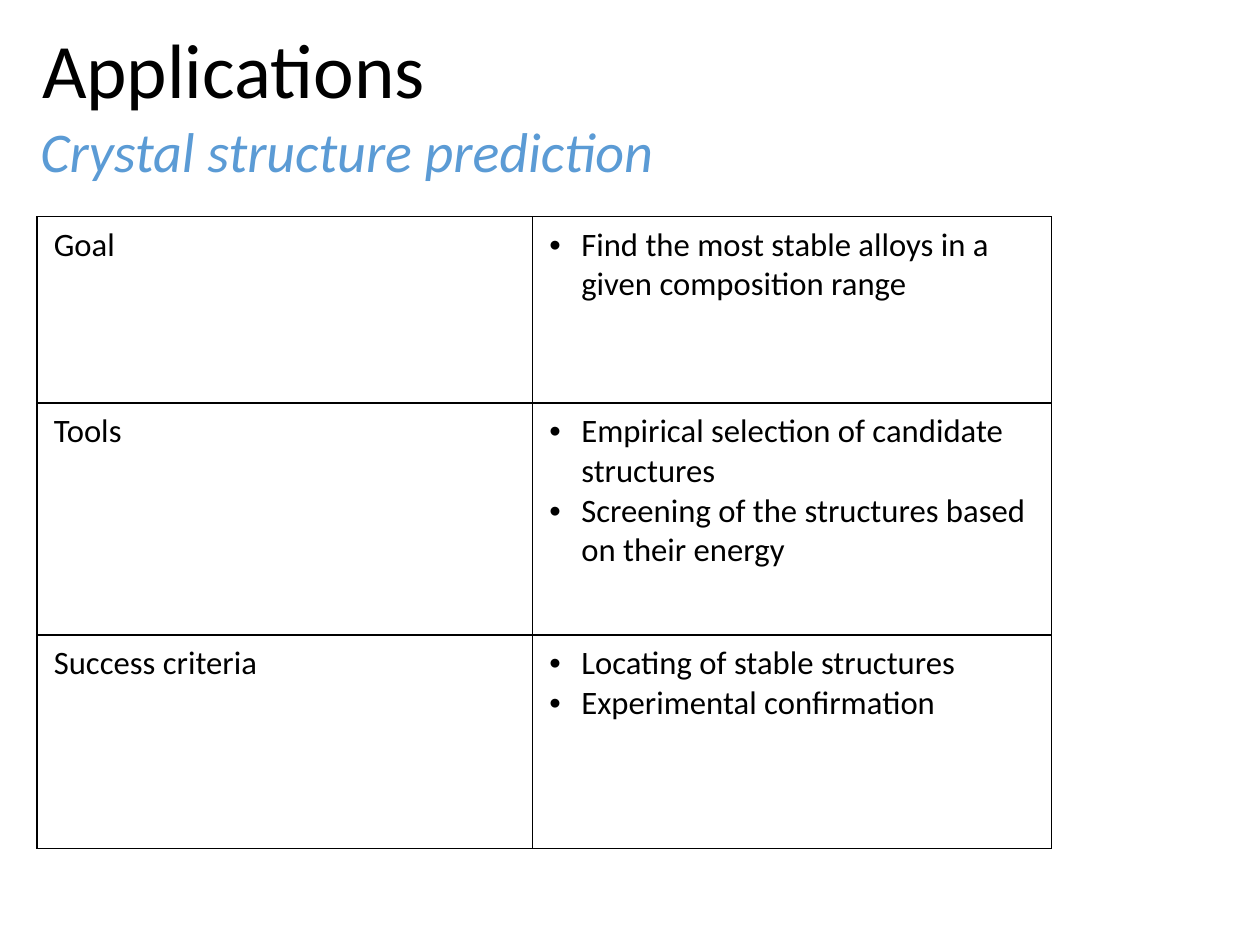
from dataclasses import dataclass

from lxml import etree
from pptx import Presentation
from pptx.dml.color import RGBColor
from pptx.enum import text
from pptx.oxml import ns
from pptx.util import Inches, Pt


@dataclass(frozen=True)
class Theme:
    font: str = "Calibri"
    ink: str = "000000"
    accent: str = "5B9BD5"
    title_size: float = 33
    subtitle_size: float = 24
    body_size: float = 14
    border_width: float = 0.75


@dataclass(frozen=True)
class Topic:
    name: str
    points: tuple[str, ...]
    height: float


THEME = Theme()
SLIDE_WIDTH = 7.5
SLIDE_HEIGHT = SLIDE_WIDTH * 3 / 4
COLUMN_WIDTHS = (2.95, 3.09)
TOPICS = (
    Topic("Goal", ("Find the most stable alloys in a given composition range",), 1.11),
    Topic("Tools", ("Empirical selection of candidate structures",
                    "Screening of the structures based on their energy"), 1.38),
    Topic("Success criteria", ("Locating of stable structures",
                               "Experimental confirmation"), 1.27),
)


def style_paragraph(paragraph, size: float, color: str = THEME.ink) -> None:
    paragraph.font.name = THEME.font
    paragraph.font.size = Pt(size)
    paragraph.font.color.rgb = RGBColor.from_string(color)


def fill_heading(heading, words: str, box: tuple[float, ...], size: float, color: str):
    """Place a one-line heading and return its paragraph."""
    heading.left, heading.top, heading.width, heading.height = map(Inches, box)
    frame = heading.text_frame
    frame.word_wrap = True
    frame.auto_size = text.MSO_AUTO_SIZE.NONE
    frame.vertical_anchor = text.MSO_ANCHOR.TOP
    frame.margin_left = frame.margin_right = Inches(0.07)
    frame.margin_top = frame.margin_bottom = Inches(0.07)
    frame.text = words
    line = frame.paragraphs[0]
    line.alignment = text.PP_ALIGN.LEFT
    line.line_spacing = 0.9
    style_paragraph(line, size, color)
    return line


def add_bullet(paragraph) -> None:
    indent = Inches(0.19)
    properties = paragraph._p.get_or_add_pPr()
    properties.set("marL", str(indent))
    properties.set("indent", str(-indent))
    etree.SubElement(properties, ns.qn("a:buFont"), typeface="Arial")
    etree.SubElement(properties, ns.qn("a:buChar"), char="•")


def add_borders(cell) -> None:
    properties = cell._tc.get_or_add_tcPr()
    for position, side in enumerate(("a:lnL", "a:lnR", "a:lnT", "a:lnB")):
        border = etree.Element(ns.qn(side), w=str(Pt(THEME.border_width)))
        fill = etree.SubElement(border, ns.qn("a:solidFill"))
        etree.SubElement(fill, ns.qn("a:srgbClr"), val=THEME.ink)
        properties.insert(position, border)


def fill_cell(cell, lines: tuple[str, ...], bulleted: bool) -> None:
    cell.fill.background()
    add_borders(cell)
    cell.text = "\n".join(lines)
    for paragraph in cell.text_frame.paragraphs:
        if bulleted:
            add_bullet(paragraph)
        style_paragraph(paragraph, THEME.body_size)


def add_topic_table(slide) -> None:
    height = sum(topic.height for topic in TOPICS)
    table = slide.shapes.add_table(
        len(TOPICS), len(COLUMN_WIDTHS), Inches(0.22), Inches(1.29),
        Inches(sum(COLUMN_WIDTHS)), Inches(height)).table
    table.first_row = table.horz_banding = False
    for column, width in zip(table.columns, COLUMN_WIDTHS):
        column.width = Inches(width)
    for row, topic in zip(table.rows, TOPICS):
        row.height = Inches(topic.height)
        fill_cell(row.cells[0], (topic.name,), bulleted=False)
        fill_cell(row.cells[1], topic.points, bulleted=True)


def main() -> None:
    deck = Presentation()
    deck.slide_width, deck.slide_height = Inches(SLIDE_WIDTH), Inches(SLIDE_HEIGHT)
    slide = deck.slides.add_slide(deck.slide_layouts.get_by_name("Title Only"))

    subtitle_box = (0.17, 0.67, 6.33, 0.52)
    subtitle = slide.shapes.add_textbox(*map(Inches, subtitle_box))
    subtitle_line = fill_heading(subtitle, "Crystal structure prediction",
                                 subtitle_box, THEME.subtitle_size, THEME.accent)
    subtitle_line.font.italic = True
    fill_heading(slide.shapes.title, "Applications", (0.18, 0.12, 6.86, 0.62),
                 THEME.title_size, THEME.ink)
    add_topic_table(slide)
    deck.save("out.pptx")


if __name__ == "__main__":
    main()
